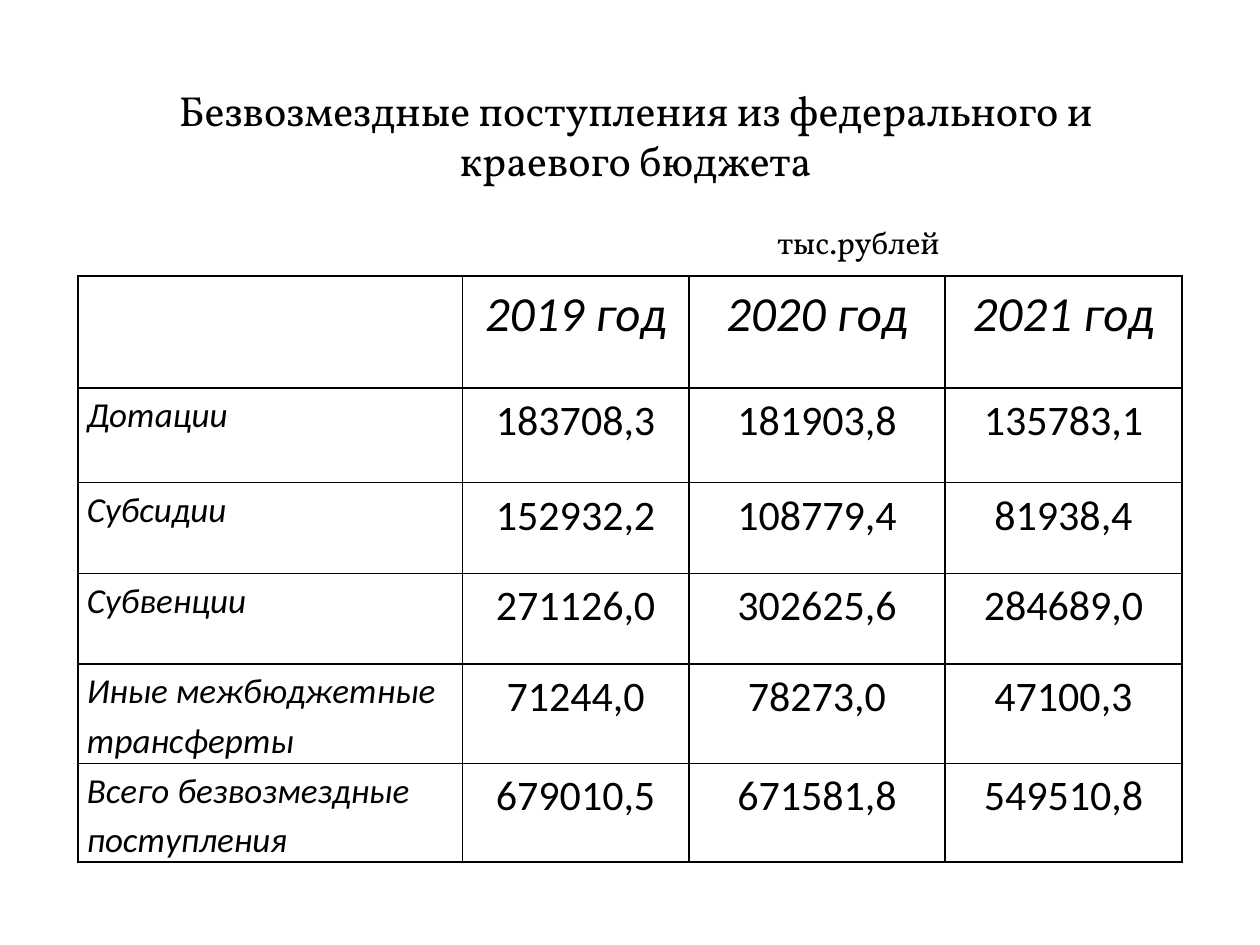
from lxml import etree
from pptx import Presentation
from pptx import util as u
from pptx.dml.color import RGBColor
from pptx.enum import text
from pptx.oxml import ns

COLORS = {"ink": "000000"}
TITLE = "Безвозмездные поступления из федерального и краевого бюджета"
UNIT = "тыс.рублей"
ROWS = [
    ["", "2019 год", "2020 год", "2021 год"],
    ["Дотации", "183708,3", "181903,8", "135783,1"],
    ["Субсидии", "152932,2", "108779,4", "81938,4"],
    ["Субвенции", "271126,0", "302625,6", "284689,0"],
    ["Иные межбюджетные трансферты", "71244,0", "78273,0", "47100,3"],
    ["Всего безвозмездные поступления", "679010,5", "671581,8", "549510,8"],
]
COLUMN_WIDTHS = [7.75, 4.57, 5.16, 4.78]
ROW_HEIGHTS = [2.26, 1.91, 1.83, 1.83, 2.0, 1.91]


class SlideBuilder:
    heading_font = "Vollkorn"
    table_font = "Calibri"
    border_width = u.Pt(1)

    def __init__(self, slide):
        self.slide = slide

    def style(self, paragraph, font_name, size, italic=False):
        font = paragraph.font
        font.name, font.size, font.italic = font_name, u.Pt(size), italic
        font.color.rgb = RGBColor.from_string(COLORS["ink"])

    def heading(self, left, top, width, height):
        """Centred title, with the unit of measure indented below it."""
        shape = self.slide.shapes.add_textbox(
            u.Cm(left), u.Cm(top), u.Cm(width), u.Cm(height))
        frame = shape.text_frame
        frame.word_wrap = True
        title = frame.paragraphs[0]
        title.text = TITLE
        title.alignment = text.PP_ALIGN.CENTER
        self.style(title, self.heading_font, 24)

        unit = frame.add_paragraph()
        unit.text = UNIT
        unit.space_before = u.Pt(22)
        unit._p.get_or_add_pPr().set("marL", str(u.Cm(12.83)))
        self.style(unit, self.heading_font, 18)

    def border(self, cell):
        properties = cell._tc.get_or_add_tcPr()
        for position, side in enumerate(("lnL", "lnR", "lnT", "lnB")):
            line = etree.Element(ns.qn(f"a:{side}"), w=str(self.border_width))
            fill = etree.SubElement(line, ns.qn("a:solidFill"))
            etree.SubElement(fill, ns.qn("a:srgbClr"), val=COLORS["ink"])
            properties.insert(position, line)

    def cell(self, cell, value, is_header, is_label):
        cell.fill.background()
        cell.margin_left = cell.margin_right = u.Cm(0.18)
        cell.margin_top = cell.margin_bottom = 0
        self.border(cell)
        paragraph = cell.text_frame.paragraphs[0]
        paragraph.text = value
        paragraph.line_spacing = 1.15
        paragraph.space_after = u.Pt(10)
        if not is_label:
            paragraph.alignment = text.PP_ALIGN.CENTER
        size = 28 if is_header else 20 if is_label else 24
        self.style(paragraph, self.table_font, size, is_header or is_label)

    def table(self, left, top):
        shape = self.slide.shapes.add_table(
            len(ROWS), len(COLUMN_WIDTHS), u.Cm(left), u.Cm(top),
            u.Cm(sum(COLUMN_WIDTHS)), u.Cm(sum(ROW_HEIGHTS)))
        table = shape.table
        table.first_row = table.horz_banding = False
        for column, width in zip(table.columns, COLUMN_WIDTHS):
            column.width = u.Cm(width)
        for row, height in zip(table.rows, ROW_HEIGHTS):
            row.height = u.Cm(height)
        for i, values in enumerate(ROWS):
            for j, value in enumerate(values):
                self.cell(table.cell(i, j), value, i == 0, j == 0)


def main():
    presentation = Presentation()
    presentation.slide_width = u.Cm(25.4)
    presentation.slide_height = u.Cm(19.05)
    slide = presentation.slides.add_slide(presentation.slide_layouts[6])
    builder = SlideBuilder(slide)
    builder.table(1.57, 5.56)
    builder.heading(2.59, 1.57, 20.45, 3.84)
    presentation.save("out.pptx")


if __name__ == "__main__":
    main()
